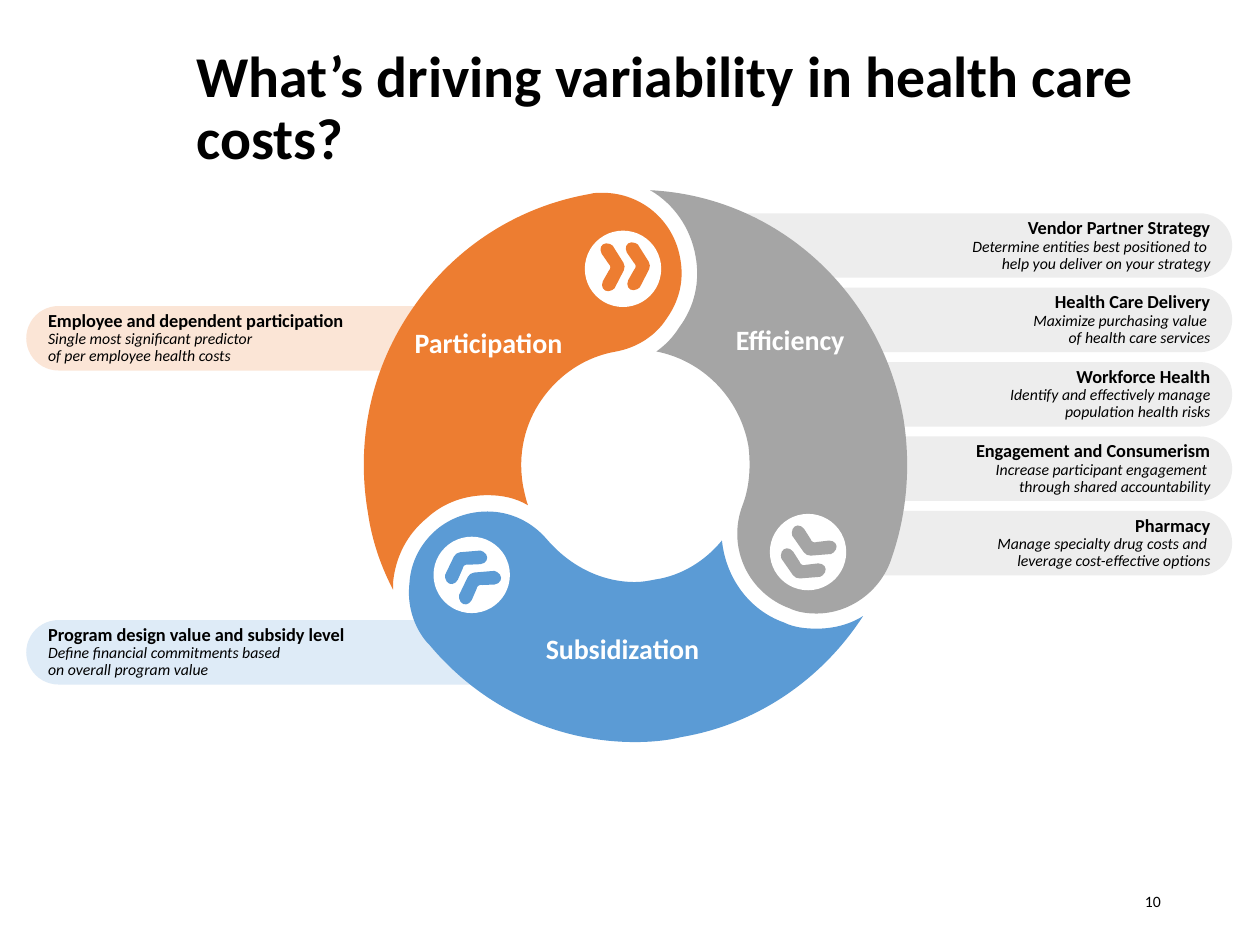
from copy import deepcopy
from dataclasses import dataclass

from pptx import Presentation
from pptx.dml.color import RGBColor
from pptx.enum.shapes import MSO_SHAPE
from pptx.enum.text import MSO_ANCHOR, PP_ALIGN
from pptx.oxml.ns import qn
from pptx.util import Cm, Pt


@dataclass(frozen=True)
class Theme:
    font: str = "Calibri"
    black: str = "000000"
    white: str = "FFFFFF"
    orange: str = "ED7D31"
    blue: str = "5B9BD5"
    gray: str = "A5A5A5"
    pale_orange: str = "FBE5D6"
    pale_blue: str = "DEEBF7"
    pale_gray: str = "EDEDED"
    title_size: float = 33
    label_size: float = 16
    heading_size: float = 10.5
    small_size: float = 9


THEME = Theme()
GRID = Cm(0.0254)  # one outline unit, a hundredth of an inch
CALLOUT_HEIGHT = 1.3
CALLOUT_RIGHT = 24.84
CALLOUT_TOP, CALLOUT_STEP = 4.3, 1.5
BADGE_SIZE = 1.54

# Outlines: a start point, then curves (six numbers) and lines (two numbers).
PARTICIPATION = [
    (529, 253), (539, 239, 543, 223, 540, 206), (535, 175, 509, 153, 478, 153),
    (475, 153, 471, 153, 468, 154), (411, 164, 361, 196, 328, 244),
    (295, 291, 282, 349, 292, 407), (295, 428, 302, 449, 312, 468),
    (312, 466, 312, 464, 312, 462), (314, 442, 323, 424, 339, 411),
    (352, 399, 369, 393, 387, 393), (398, 393, 409, 395, 419, 401),
    (417, 395, 416, 390, 415, 385), (411, 361, 416, 337, 430, 317),
    (444, 297, 465, 283, 489, 279), (505, 276, 520, 267, 529, 253),
]
SUBSIDIZATION = [
    (520, 460), (515, 461, 510, 462, 504, 462), (477, 462, 452, 449, 434, 428),
    (422, 414, 405, 406, 387, 406), (372, 406, 358, 411, 347, 420),
    (334, 431, 326, 446, 325, 463), (323, 480, 328, 497, 339, 510), (341, 512),
    (382, 561, 441, 589, 504, 589), (516, 589, 529, 588, 541, 585),
    (600, 575, 652, 540, 685, 489), (674, 496, 661, 499, 648, 499),
    (639, 499, 630, 498, 622, 494), (594, 484, 576, 458, 573, 429),
    (560, 445, 541, 457, 520, 460),
]
EFFICIENCY = [
    (627, 483), (633, 486, 641, 487, 648, 487), (674, 487, 698, 470, 707, 445),
    (708, 442), (720, 407, 723, 369, 717, 332), (699, 231, 616, 156, 516, 151),
    (535, 162, 548, 181, 552, 203), (556, 224, 551, 244, 539, 260),
    (534, 268, 528, 274, 521, 279), (557, 286, 587, 315, 594, 354),
    (596, 370, 595, 387, 589, 402), (577, 435, 594, 471, 627, 483),
]
CHEVRON = [
    (6, 0), (8, 0, 10, 1, 11, 2), (19, 16), (20, 18, 20, 20, 19, 22), (11, 36),
    (10, 37, 8, 38, 6, 38), (2, 38, 0, 34, 2, 30), (7, 22),
    (9, 20, 9, 18, 7, 16), (2, 8), (0, 4, 2, 0, 6, 0),
]

EFFICIENCY_CALLOUTS = [
    (14.25, "Vendor Partner Strategy",
     "Determine entities best positioned to \vhelp you deliver on your strategy"),
    (14.4, "Health Care Delivery",
     "Maximize purchasing value \vof health care services"),
    (15.42, "Workforce Health",
     "Identify and effectively manage\vpopulation health risks"),
    (15.42, "Engagement and Consumerism",
     "Increase participant engagement \vthrough shared accountability"),
    (15.42, "Pharmacy",
     "Manage specialty drug costs and \vleverage cost-effective options"),
]
SECTIONS = [
    # outline, colour, label, label box (left, top, width)
    (PARTICIPATION, THEME.orange, "Participation", (7.87, 6.43, 3.96)),
    (SUBSIDIZATION, THEME.blue, "Subsidization", (10.44, 12.6, 4.22)),
    (EFFICIENCY, THEME.gray, "Efficiency", (14.33, 6.38, 3.2)),
]
BADGES = [
    # circle corner, chevron colour, chevron rotation, chevron corners
    ((15.52, 10.36), THEME.gray, 115.3, [(16.1, 10.49), (15.88, 10.95)]),
    ((8.74, 10.82), THEME.blue, 235.5, [(9.35, 11.28), (9.07, 10.87)]),
    ((11.79, 4.65), THEME.orange, 357.5, [(12.09, 4.9), (12.6, 4.88)]),
]


def write(para, text, size, color=THEME.black, bold=False, italic=False,
          align=PP_ALIGN.LEFT, spacing=None):
    """Fill a paragraph; line breaks take the format of the text."""
    para.text = text
    para.alignment = align
    para.line_spacing = spacing
    for span in para.runs:
        span.font.name = THEME.font
        span.font.size = Pt(size)
        span.font.bold = bold
        span.font.italic = italic
        span.font.color.rgb = RGBColor.from_string(color)
    for line_break in para._p.findall(qn("a:br")):
        line_break.append(deepcopy(para.runs[0].font._element))


def bend(shape, outline):
    """Turn the straight segments of a freeform into the outline's curves."""
    min_x = min(segment[-2] for segment in outline)
    min_y = min(segment[-1] for segment in outline)
    lines = list(shape._element.iter(qn("a:lnTo")))
    for line, segment in zip(lines, outline[1:]):
        if len(segment) == 2:
            continue
        line.tag = qn("a:cubicBezTo")
        for index in range(2):
            x, y = segment[2 * index:2 * index + 2]
            control = deepcopy(line[-1])
            control.set("x", str((x - min_x) * GRID))
            control.set("y", str((y - min_y) * GRID))
            line.insert(index, control)


class SlideBuilder:
    def __init__(self, page):
        self.shapes = page.shapes

    def paint(self, shape, color):
        shape.shadow.inherit = False
        shape.fill.solid()
        shape.fill.fore_color.rgb = RGBColor.from_string(color)
        shape.line.fill.background()
        return shape

    def text(self, text, left, top, width, height, anchor=MSO_ANCHOR.MIDDLE, **style):
        box = self.shapes.add_textbox(Cm(left), Cm(top), Cm(width), Cm(height))
        frame = box.text_frame
        frame.word_wrap = True
        frame.vertical_anchor = anchor
        write(frame.paragraphs[0], text, **style)

    def preset(self, kind, left, top, width, height, color):
        shape = self.shapes.add_shape(kind, Cm(left), Cm(top), Cm(width), Cm(height))
        return self.paint(shape, color)

    def callout(self, heading, detail, left, top, width, color, align=PP_ALIGN.LEFT):
        pill = self.preset(MSO_SHAPE.ROUNDED_RECTANGLE, left, top, width,
                           CALLOUT_HEIGHT, color)
        pill.adjustments[0] = 0.5
        frame = pill.text_frame
        frame.word_wrap = True
        frame.vertical_anchor = MSO_ANCHOR.MIDDLE
        write(frame.paragraphs[0], heading, THEME.heading_size, bold=True,
              align=align, spacing=0.9)
        write(frame.add_paragraph(), detail, THEME.small_size, italic=True,
              align=align, spacing=0.9)

    def outline(self, outline, color, left=0, top=0, rotation=0):
        start, *rest = [(x * GRID, y * GRID) for *_, x, y in outline]
        builder = self.shapes.build_freeform(*start)
        builder.add_line_segments(rest, close=True)
        shape = self.paint(builder.convert_to_shape(Cm(left), Cm(top)), color)
        bend(shape, outline)
        shape.rotation = rotation


def main():
    deck = Presentation()
    deck.slide_width, deck.slide_height = Cm(25.4), Cm(19.05)
    page = deck.slides.add_slide(deck.slide_layouts[6])
    slide = SlideBuilder(page)

    slide.text("What’s driving variability in health care costs?", 3.71, 0.38, 21.69, 3.68,
               size=THEME.title_size, bold=True, spacing=0.9)
    slide.text("10", 17.93, 17.65, 5.72, 1.02, size=THEME.small_size, align=PP_ALIGN.RIGHT)

    for row, (left, heading, detail) in enumerate(EFFICIENCY_CALLOUTS):
        slide.callout(heading, detail, left, CALLOUT_TOP + row * CALLOUT_STEP,
                      CALLOUT_RIGHT - left, THEME.pale_gray, align=PP_ALIGN.RIGHT)
    slide.callout("Program design value and subsidy level",
                  "Define financial commitments based \von overall program value",
                  0.53, 12.5, 13.18, THEME.pale_blue)
    slide.callout("Employee and dependent participation",
                  "Single most significant predictor \vof per employee health costs",
                  0.53, 6.17, 10.72, THEME.pale_orange)

    for outline, color, _, _ in SECTIONS:
        slide.outline(outline, color)
    for corner, color, rotation, chevrons in BADGES:
        slide.preset(MSO_SHAPE.OVAL, *corner, BADGE_SIZE, BADGE_SIZE, THEME.white)
        for left, top in chevrons:
            slide.outline(CHEVRON, color, left, top, rotation)
    for _, _, label, place in SECTIONS:
        slide.text(label, *place, 0.94, anchor=MSO_ANCHOR.TOP, size=THEME.label_size,
                   color=THEME.white, bold=True, align=PP_ALIGN.CENTER)

    deck.save("out.pptx")


if __name__ == "__main__":
    main()
